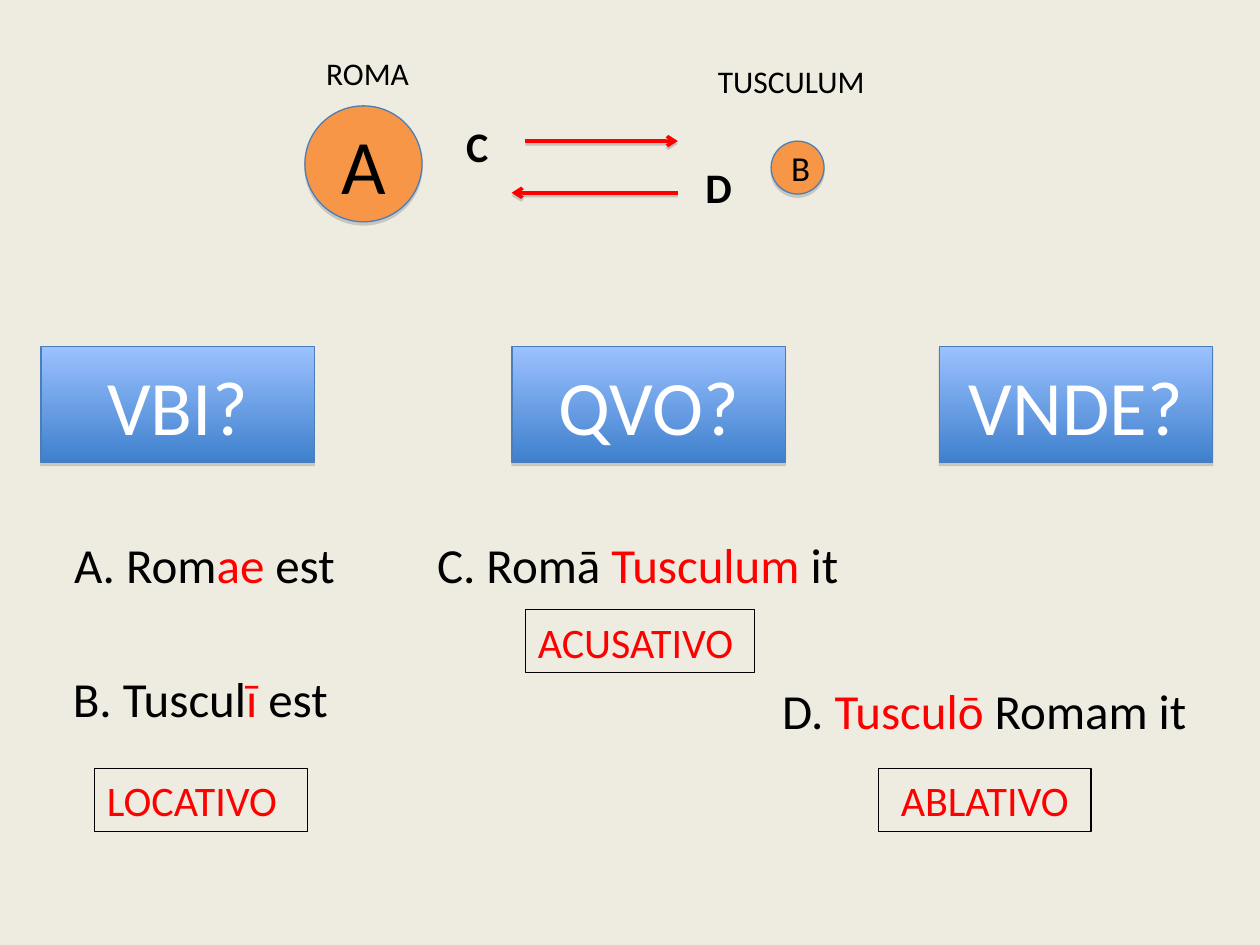
from dataclasses import dataclass
from typing import NamedTuple

from lxml.etree import SubElement
from pptx import Presentation
from pptx.dml.color import RGBColor
from pptx.enum.shapes import MSO_CONNECTOR, MSO_SHAPE
from pptx.enum.text import MSO_ANCHOR, PP_ALIGN
from pptx.oxml.ns import qn
from pptx.util import Inches, Pt

COLUMNS, ROWS = 100, 75
PAGE_WIDTH, PAGE_HEIGHT = Inches(10), Inches(7.5)


@dataclass(frozen=True)
class Theme:
    font: str = "Calibri"
    paper: str = "EEECE1"
    ink: str = "000000"
    accent: str = "FF0000"
    light: str = "FFFFFF"
    city: str = "F79646"
    outline: str = "4A7EBB"
    banner: tuple[str, str] = ("9BC1FF", "3F80CD")
    shadow: str = "808080"
    huge: int = 44
    sentence: int = 28
    label: int = 24
    small: int = 20
    caption: int = 18


class Area(NamedTuple):
    """A place on the page in grid columns and rows."""
    column: float
    row: float
    width: float
    height: float


class Span(NamedTuple):
    text: str
    color: str


class Label(NamedTuple):
    area: Area
    spans: list[Span]
    size: int
    align: PP_ALIGN = PP_ALIGN.LEFT
    bold: bool = False
    framed: bool = False


class City(NamedTuple):
    name: str
    area: Area
    size: int
    left_margin: float = 0


class Arrow(NamedTuple):
    start: float
    end: float
    row: float


theme = Theme()


def across(columns: float) -> int:
    return round(PAGE_WIDTH * columns / COLUMNS)


def down(rows: float) -> int:
    return round(PAGE_HEIGHT * rows / ROWS)


def place(area: Area) -> tuple[int, int, int, int]:
    return across(area.column), down(area.row), across(area.width), down(area.height)


def rgb(color: str) -> RGBColor:
    return RGBColor.from_string(color)


def plain(text: str) -> list[Span]:
    return [Span(text, theme.ink)]


def marked(text: str) -> list[Span]:
    """Split text at bars; every second part is in the accent colour."""
    return [Span(part, theme.accent if index % 2 else theme.ink)
            for index, part in enumerate(text.split("|")) if part]


def write(frame, spans: list[Span], size: int, align: PP_ALIGN, bold: bool = False) -> None:
    para = frame.paragraphs[0]
    para.alignment = align
    for span in spans:
        run = para.add_run()
        run.text = span.text
        run.font.name = theme.font
        run.font.size = Pt(size)
        run.font.bold = bold
        run.font.color.rgb = rgb(span.color)


def cast_shadow(effects, distance: float, opacity: int) -> None:
    shadow = SubElement(effects, qn("a:outerShdw"), dist=str(Pt(distance)),
                        dir="5400000", rotWithShape="0")
    color = SubElement(shadow, qn("a:srgbClr"), val=theme.shadow)
    SubElement(color, qn("a:alpha"), val=str(opacity * 1000))


def add_raised(page, kind: MSO_SHAPE, area: Area, span: Span, size: int):
    shape = page.shapes.add_shape(kind, *place(area))
    shape.line.color.rgb = rgb(theme.outline)
    shape.line.width = Pt(0.75)
    shape.shadow.inherit = False
    cast_shadow(shape._element.spPr.find(qn("a:effectLst")), 1.8, 35)
    shape.text_frame.vertical_anchor = MSO_ANCHOR.MIDDLE
    write(shape.text_frame, [span], size, PP_ALIGN.CENTER)
    return shape


def add_banner(page, text: str, column: float) -> None:
    area = Area(column, 27.5, 21.7, 9.2)
    shape = add_raised(page, MSO_SHAPE.RECTANGLE, area, Span(text, theme.light), theme.huge)
    shape.fill.gradient()
    shape.fill.gradient_angle = 270
    for stop, color in zip(shape.fill.gradient_stops, theme.banner):
        stop.color.rgb = rgb(color)


def add_city(page, city: City) -> None:
    shape = add_raised(page, MSO_SHAPE.OVAL, city.area, Span(city.name, theme.ink), city.size)
    shape.fill.solid()
    shape.fill.fore_color.rgb = rgb(theme.city)
    frame = shape.text_frame
    frame.margin_left, frame.margin_right = across(city.left_margin), 0


def add_arrow(page, arrow: Arrow) -> None:
    level = down(arrow.row)
    line = page.shapes.add_connector(
        MSO_CONNECTOR.STRAIGHT, across(arrow.start), level, across(arrow.end), level)
    line.line.color.rgb = rgb(theme.accent)
    line.line.width = Pt(2)
    SubElement(line.line._get_or_add_ln(), qn("a:tailEnd"), type="arrow")
    cast_shadow(SubElement(line._element.spPr, qn("a:effectLst")), 1.6, 38)


def add_label(page, label: Label) -> None:
    box = page.shapes.add_textbox(*place(label.area))
    box.text_frame.word_wrap = True
    if label.framed:
        box.line.color.rgb = rgb(theme.ink)
        box.line.width = Pt(0.75)
    write(box.text_frame, label.spans, label.size, label.align, label.bold)


def case_name(text: str, area: Area, align: PP_ALIGN = PP_ALIGN.LEFT) -> Label:
    return Label(area, [Span(text, theme.accent)], theme.label, align, framed=True)


BANNERS = {"VBI?": 3.25, "QVO?": 40.65, "VNDE?": 74.55}
CITIES = [
    City("A", Area(24.2, 8.4, 9.3, 9.2), theme.huge),
    City("B", Area(61.2, 11.2, 4.2, 4.2), theme.small, left_margin=0.5),
]
ARROWS = [Arrow(41.7, 53.8, 11.2), Arrow(53.8, 40.6, 15.3)]
LABELS = [
    # Towns and the ways between them
    Label(Area(24.9, 3.8, 8.8, 4), plain("ROMA"), theme.caption),
    Label(Area(55, 4.4, 15.6, 4), plain("TUSCULUM"), theme.caption, PP_ALIGN.CENTER),
    Label(Area(36, 9.1, 3.9, 5), plain("C"), theme.label, bold=True),
    Label(Area(55, 12.3, 3.9, 5), plain("D"), theme.label, bold=True),
    # Example sentences
    Label(Area(4.9, 41.9, 24.7, 5.7), marked("A. Rom|ae| est"), theme.sentence),
    Label(Area(4.8, 52.6, 24.6, 5.7), marked("B. Tuscul|ī| est"), theme.sentence),
    Label(Area(33.7, 41.9, 35.5, 5.7), marked("C. Romā |Tusculum| it"), theme.sentence),
    Label(Area(61.1, 53.5, 37, 5.7), marked("D. |Tusculō |Romam it"), theme.sentence),
    # Grammatical cases
    case_name("LOCATIVO", Area(7.5, 61, 16.9, 5)),
    case_name("ACUSATIVO", Area(41.7, 48.4, 18.2, 5)),
    case_name("ABLATIVO", Area(69.7, 61, 16.9, 5), PP_ALIGN.CENTER),
]


def main() -> None:
    deck = Presentation()
    deck.slide_width, deck.slide_height = PAGE_WIDTH, PAGE_HEIGHT
    page = deck.slides.add_slide(deck.slide_layouts[6])
    page.background.fill.solid()
    page.background.fill.fore_color.rgb = rgb(theme.paper)

    for text, column in BANNERS.items():
        add_banner(page, text, column)
    for city in CITIES:
        add_city(page, city)
    for arrow in ARROWS:
        add_arrow(page, arrow)
    for label in LABELS:
        add_label(page, label)
    deck.save("out.pptx")


if __name__ == "__main__":
    main()
